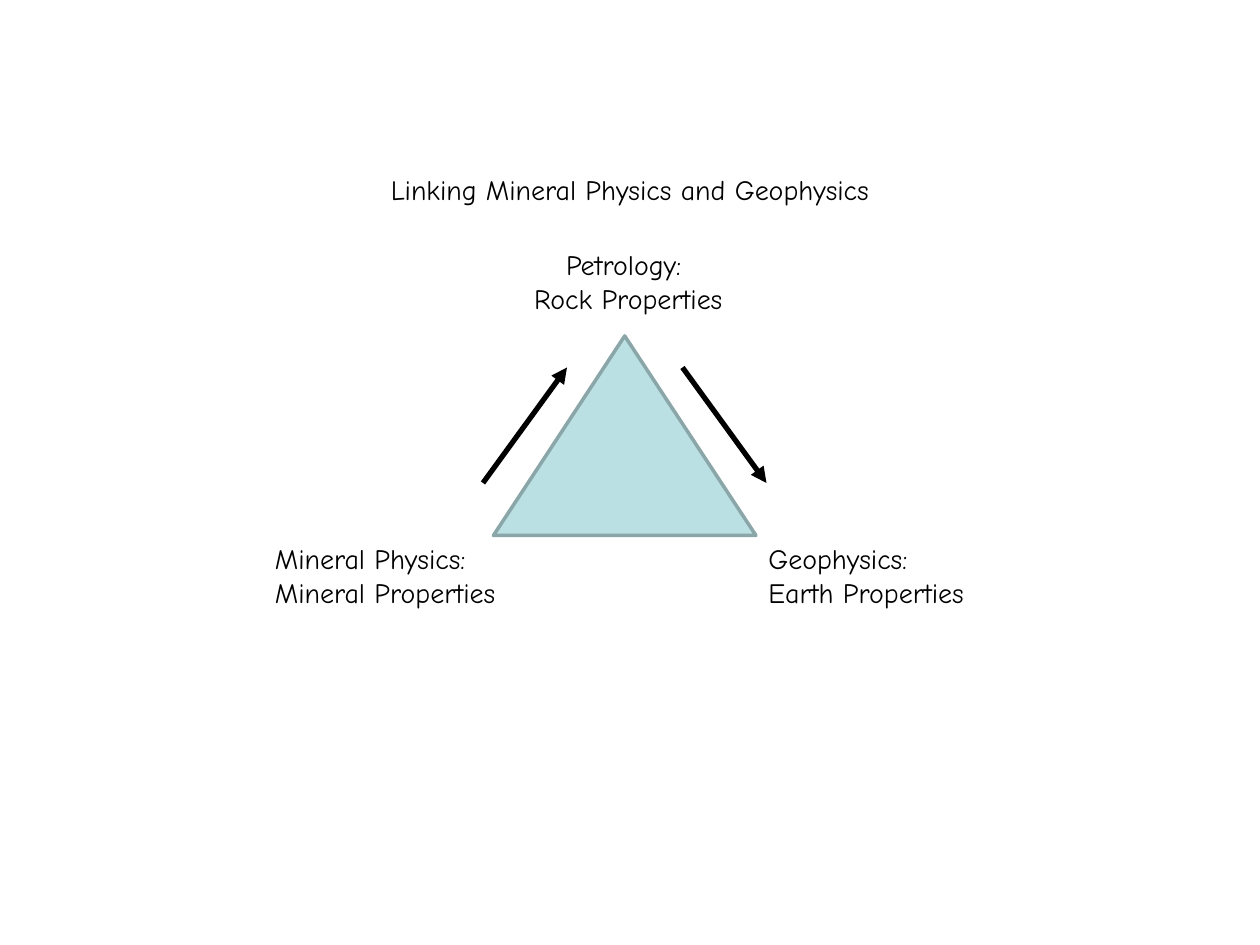
"""Build a slide with a triangle linking mineral physics, petrology and geophysics."""
import pptx
import pptx.dml.color
import pptx.enum.shapes
import pptx.enum.text
import pptx.oxml
import pptx.oxml.ns
import pptx.util

BLACK = pptx.dml.color.RGBColor(0x00, 0x00, 0x00)
PALE_TEAL = pptx.dml.color.RGBColor(0xBB, 0xE0, 0xE3)
GREY_TEAL = pptx.dml.color.RGBColor(0x8A, 0xA6, 0xA8)

LEFT = pptx.enum.text.PP_ALIGN.LEFT
CENTER = pptx.enum.text.PP_ALIGN.CENTER
FONT = {"name": "Comic Neue", "size": pptx.util.Pt(16), "bold": False}

WIDTH, HEIGHT = pptx.util.Inches(10), pptx.util.Inches(7.5)
COLUMNS, ROWS = 120, 90

TITLE = ("Linking Mineral Physics and Geophysics", (9, 10, 102, 19.3))
TRIANGLE = (47, 32, 25, 19)
LABELS = [
    (["Mineral Physics:", "Mineral Properties"], (25, 51, 25.8, 7.7), LEFT),
    (["Petrology: ", "Rock Properties"], (48.7, 23, 22.3, 7.7), CENTER),
    (["Geophysics:", "Earth Properties"], (72, 51, 23.5, 7.7), LEFT),
]
ARROWS = [(46, 46, 54, 35), (65, 35, 73, 46)]


def place(cells):
    """Turn column and row numbers into slide lengths."""
    units = (WIDTH / COLUMNS, HEIGHT / ROWS) * 2
    return [round(cell * unit) for cell, unit in zip(cells, units)]


def write(frame, lines, alignment):
    """Write one paragraph per line in the slide's font."""
    frame.text = "\n".join(lines)
    for paragraph in frame.paragraphs:
        paragraph.alignment = alignment
        for name, value in FONT.items():
            setattr(paragraph.font, name, value)
        paragraph.font.color.rgb = BLACK


def add_title(slide):
    title = slide.shapes.title
    text, cells = TITLE
    for name, value in zip(("left", "top", "width", "height"), place(cells)):
        setattr(title, name, value)
    frame = title.text_frame
    write(frame, [text], CENTER)
    formats = {
        "auto_size": pptx.enum.text.MSO_AUTO_SIZE.NONE,
        "vertical_anchor": pptx.enum.text.MSO_ANCHOR.MIDDLE,
        "margin_bottom": pptx.util.Inches(0.32),
    }
    for name, value in formats.items():
        setattr(frame, name, value)


def add_triangle(slide):
    kind = pptx.enum.shapes.MSO_SHAPE.ISOSCELES_TRIANGLE
    triangle = slide.shapes.add_shape(kind, *place(TRIANGLE))
    triangle.shadow.inherit = False
    triangle.fill.solid()
    triangle.fill.fore_color.rgb = PALE_TEAL
    triangle.line.color.rgb = GREY_TEAL
    triangle.line.width = pptx.util.Pt(2)


def add_label(slide, lines, cells, alignment):
    frame = slide.shapes.add_textbox(*place(cells)).text_frame
    frame.word_wrap = False
    frame.auto_size = pptx.enum.text.MSO_AUTO_SIZE.SHAPE_TO_FIT_TEXT
    write(frame, lines, alignment)


def add_arrow(slide, cells):
    kind = pptx.enum.shapes.MSO_CONNECTOR.STRAIGHT
    arrow = slide.shapes.add_connector(kind, *place(cells))
    arrow.line.color.rgb = BLACK
    arrow.line.width = pptx.util.Pt(3)
    head = pptx.oxml.parse_xml(
        f'<a:tailEnd {pptx.oxml.ns.nsdecls("a")} type="triangle"/>')
    arrow.line._get_or_add_ln().append(head)
    effects = pptx.oxml.parse_xml(f'<a:effectLst {pptx.oxml.ns.nsdecls("a")}/>')
    arrow._element.spPr.append(effects)


def main():
    presentation = pptx.Presentation()
    presentation.slide_width, presentation.slide_height = WIDTH, HEIGHT
    slide = presentation.slides.add_slide(presentation.slide_layouts[5])
    add_title(slide)
    add_triangle(slide)
    for label in LABELS:
        add_label(slide, *label)
    for arrow in ARROWS:
        add_arrow(slide, arrow)
    presentation.save("out.pptx")


if __name__ == "__main__":
    main()
